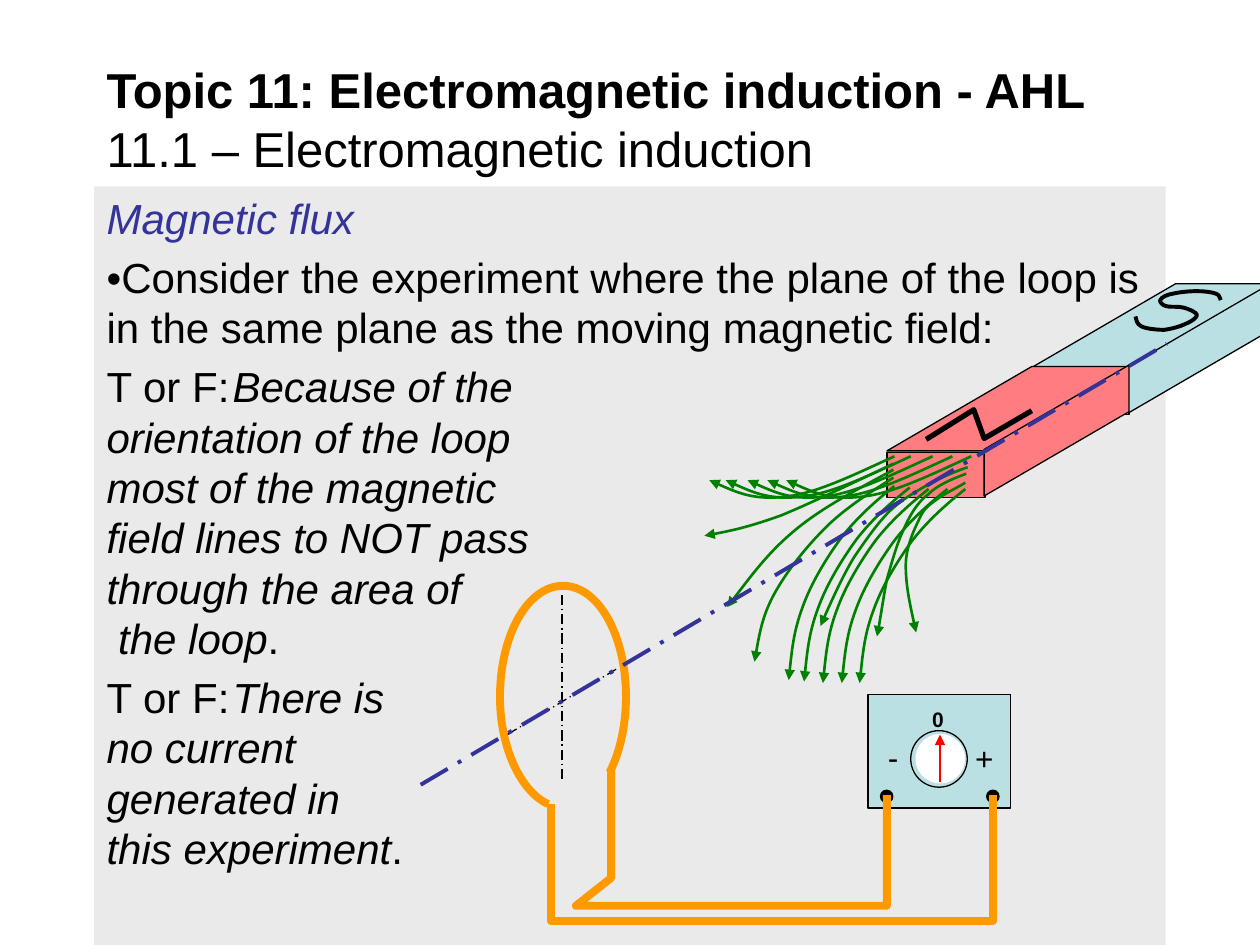
from dataclasses import dataclass

from lxml import etree
from pptx import Presentation
from pptx.dml.color import RGBColor
from pptx.enum.dml import MSO_LINE
from pptx.enum.shapes import MSO_CONNECTOR, MSO_SHAPE
from pptx.enum.text import MSO_ANCHOR, PP_ALIGN
from pptx.oxml.ns import qn
from pptx.util import Cm, Pt

RECTANGLE, OVAL = MSO_SHAPE.RECTANGLE, MSO_SHAPE.OVAL
STRAIGHT = MSO_CONNECTOR.STRAIGHT
LONG_DASH_DOT = MSO_LINE.LONG_DASH_DOT
TOP, MIDDLE = MSO_ANCHOR.TOP, MSO_ANCHOR.MIDDLE
LEFT = PP_ALIGN.LEFT

FLAT_BEND = [(0, 0), (-0.79, 0.36), (-1.55, 0.74), (-2.18, 0.81), (-2.82, 0.89), (-3.28, 0.69), (-3.73, 0.48)]
STEEP_BEND = [(0, 0), (-0.38, 0.3), (-0.76, 0.64), (-1.07, 1.04), (-1.37, 1.45), (-1.68, 1.96),
              (-1.85, 2.44), (-2.03, 2.92), (-2.08, 3.43), (-2.13, 3.91)]
FLAT_STARTS = [(18.03, 9.2), (18.36, 9.2), (18.8, 9.2), (19.2, 9.2), (19.58, 9.2)]
STEEP_STARTS = [(18.03, 9.8), (18.34, 9.83), (18.72, 9.86), (19.1, 9.86), (19.46, 9.86)]
SINGLE_FIELD_LINES = [
    [(18.01, 9.63), (17.53, 9.93), (17.02, 10.26), (16.64, 10.64), (16.23, 11.05), (15.85, 11.53),
     (15.6, 11.99), (15.37, 12.42), (15.29, 12.88), (15.21, 13.34)],
    [(18.01, 9.47), (17.3, 9.86), (16.61, 10.21), (16.05, 10.67), (15.49, 11.13), (15.09, 11.68), (14.66, 12.24)],
    [(18.01, 9.35), (17.2, 9.73), (16.38, 10.13), (15.75, 10.39), (15.11, 10.62), (14.66, 10.72), (14.2, 10.8)],
    [(19.46, 9.73), (19.25, 9.86), (19.02, 9.96), (18.87, 10.08), (18.69, 10.21), (18.62, 10.26), (18.52, 10.49),
     (18.42, 10.69), (18.26, 11.05), (18.26, 11.4), (18.26, 11.79), (18.36, 12.27), (18.47, 12.75)],
    [(19.48, 9.55), (19.35, 9.6), (18.92, 9.75), (18.72, 9.96), (18.49, 10.13), (18.34, 10.39), (18.21, 10.69),
     (18.08, 10.97), (17.98, 11.33), (17.88, 11.68), (17.81, 12.04), (17.73, 12.6), (17.68, 12.83)],
    [(19.51, 9.42), (19.35, 9.47), (18.95, 9.63), (18.69, 9.78), (18.44, 9.93), (18.19, 10.06), (17.93, 10.31),
     (17.7, 10.54), (17.48, 10.85), (17.22, 11.23), (16.99, 11.61), (16.66, 12.34), (16.54, 12.62)],
]
LETTER_N = [(18.67, 8.86), (19.63, 8.26), (19.84, 8.84), (20.8, 8.28)]
LETTER_S = [(24.61, 6.05), (24.59, 6.02), (24.59, 5.94), (24.51, 5.92), (24.43, 5.89), (24.28, 5.87), (24.13, 5.87),
            (23.98, 5.87), (23.77, 5.89), (23.65, 5.92), (23.52, 5.94), (23.42, 5.99), (23.39, 6.05),
            (23.37, 6.07), (23.42, 6.15), (23.5, 6.17), (23.57, 6.2), (23.75, 6.17), (23.85, 6.2),
            (23.95, 6.22), (24.13, 6.3), (24.13, 6.35), (24.13, 6.4), (24.03, 6.48), (23.9, 6.53),
            (23.8, 6.58), (23.62, 6.63), (23.47, 6.65), (23.32, 6.65), (23.11, 6.63), (23.01, 6.58),
            (22.91, 6.53), (22.91, 6.45), (22.89, 6.38)]
LOOP = [(11.05, 16.21), (10.49, 15.95), (10.08, 15.06), (10.08, 14.05), (10.08, 12.8), (10.64, 11.81), (11.35, 11.81),
        (12.06, 11.81), (12.62, 12.8), (12.62, 14.05), (12.62, 14.61), (12.5, 15.16), (12.29, 15.57)]
OUTER_WIRE = [(11.1, 16.21), (11.1, 18.57), (20.02, 18.57), (20.02, 16.03)]
INNER_WIRE = [(12.32, 15.49), (12.32, 17.7), (11.61, 18.26), (17.88, 18.26), (17.88, 16.03)]


@dataclass(frozen=True)
class Theme:
    font: str = "Arial"
    black: str = "000000"
    white: str = "FFFFFF"
    panel: str = "EAEAEA"
    accent: str = "333399"
    south: str = "BBE0E3"
    north: str = "FF7C80"
    field: str = "008000"
    wire: str = "FF9900"
    needle: str = "FF0000"
    title_size: int = 28
    body_size: int = 24
    sign_size: int = 18
    zero_size: int = 12
    thin: float = 0.75
    medium: float = 1.5
    bold: float = 2.25
    heavy: float = 3
    cable: float = 4.5


def add_text(paragraph, text, font, size, color, bold=False, italic=False):
    for index, line in enumerate(text.split("\n")):
        if index:
            paragraph.add_line_break()
        run = paragraph.add_run()
        run.text = line
        run.font.name, run.font.size = font, Pt(size)
        run.font.bold, run.font.italic = bold, italic
        run.font.color.rgb = RGBColor.from_string(color)


class Sketch:
    """Draws themed elements on the current slide, with positions in centimetres."""

    def __init__(self, slide, theme):
        self.slide, self.theme = slide, theme

    def paint(self, shape, fill, line, width, arrow=False):
        shape.shadow.inherit = False
        if fill:
            shape.fill.solid()
            shape.fill.fore_color.rgb = RGBColor.from_string(fill)
        else:
            shape.fill.background()
        self.stroke(shape, line, width, arrow)

    def stroke(self, shape, line, width, arrow=False):
        if not line:
            shape.line.fill.background()
            return
        shape.line.color.rgb = RGBColor.from_string(line)
        shape.line.width = Pt(width)
        if arrow:
            etree.SubElement(shape._element.xpath(".//a:ln")[0], qn("a:tailEnd"), type="triangle")

    def shape(self, kind, box, fill=None, line=None):
        shape = self.slide.shapes.add_shape(kind, *map(Cm, box))
        self.paint(shape, fill, line, self.theme.thin)
        return shape

    def outline(self, points, line, width, fill=None, curved=False, arrow=False):
        corners = [(Cm(x), Cm(y)) for x, y in points]
        builder = self.slide.shapes.build_freeform(*corners[0])
        builder.add_line_segments(corners[1:], close=bool(fill))
        shape = builder.convert_to_shape()
        self.paint(shape, fill, line, width, arrow)
        if curved:
            segments = shape._element.xpath(".//a:lnTo")
            for start in range(0, len(segments), 3):
                curve = etree.Element(qn("a:cubicBezTo"))
                segments[start].addprevious(curve)
                for segment in segments[start:start + 3]:
                    curve.append(segment[0])
                    segment.getparent().remove(segment)

    def connector(self, start, end, line, width, dash=None, arrow=False):
        connector = self.slide.shapes.add_connector(STRAIGHT, *map(Cm, start + end))
        self.stroke(connector, line, width, arrow)
        if dash:
            connector.line.dash_style = dash
        etree.SubElement(connector._element.spPr, qn("a:effectLst"))

    def text_box(self, box):
        return self.slide.shapes.add_textbox(*map(Cm, box))

    def paragraphs(self, shape, paragraphs, size, anchor=TOP, space=0):
        frame = shape.text_frame
        frame.word_wrap, frame.vertical_anchor = True, anchor
        for index, runs in enumerate(paragraphs):
            paragraph = frame.add_paragraph() if index else frame.paragraphs[0]
            paragraph.alignment, paragraph.space_before = LEFT, Pt(space)
            for text, style in runs:
                add_text(paragraph, text, **{"font": self.theme.font, "size": size, "color": self.theme.black, **style})

    def magnet_half(self, x, y, fill):
        theme = self.theme
        self.shape(RECTANGLE, (x, y + 0.03, 1.98, 0.91), fill, theme.black)
        top = [(0, 0), (2.92, -1.7), (4.88, -1.7), (1.96, 0)]
        side = [(1.96, 0.91), (1.96, -0.03), (4.88, -1.73), (4.88, -0.79)]
        for face in (top, side):
            self.outline(shifted(face, (x, y)), theme.black, theme.thin, fill)


def shifted(points, origin):
    return [(origin[0] + x, origin[1] + y) for x, y in points]


def draw_text(sketch):
    theme, italic = sketch.theme, {"italic": True}
    panel = sketch.shape(RECTANGLE, (1.9, 3.76, 21.6, 15.29), theme.panel)
    sketch.paragraphs(panel, [
        [("Magnetic flux", {"italic": True, "color": theme.accent})],
        [("•Consider the experiment where the plane of the loop is in the same plane as the moving magnetic field:", {})],
        [("T or F:\t", {}),
         ("Because of the\norientation of the loop\nmost of the magnetic\nfield lines to NOT pass\n"
          "through the area of\n the loop", italic), (".", {})],
        [("T or F:\t", {}), ("There is\nno current\ngenerated in\nthis experiment", italic), (".", {})],
    ], theme.body_size, space=4.8)
    sketch.paragraphs(sketch.text_box((1.9, 1.14, 21.6, 2.49)), [[
        ("Topic 11: Electromagnetic induction - AHL\n", {"bold": True}),
        ("11.1 – Electromagnetic induction", {}),
    ]], theme.title_size, MIDDLE)


def draw_magnet(sketch):
    theme = sketch.theme
    sketch.magnet_half(20.78, 7.42, theme.south)
    sketch.magnet_half(17.88, 9.09, theme.north)
    sketch.outline(LETTER_N, theme.black, theme.heavy)
    sketch.outline(LETTER_S, theme.black, theme.bold, curved=True)
    flat = [shifted(FLAT_BEND, start) for start in FLAT_STARTS]
    steep = [shifted(STEEP_BEND, start) for start in STEEP_STARTS]
    for points in flat + steep + SINGLE_FIELD_LINES:
        sketch.outline(points, theme.field, theme.medium, curved=True, arrow=True)


def draw_circuit(sketch):
    theme = sketch.theme
    sketch.outline(LOOP, theme.wire, theme.cable, curved=True)
    sketch.shape(RECTANGLE, (17.5, 14, 2.87, 2.29), theme.south, theme.black)
    sketch.shape(OVAL, (18.36, 14.73, 1.14, 1.14), line=theme.black)
    for text, box, size, bold in [("-", (17.65, 14.76, 0.79, 1.02), theme.sign_size, False),
                                  ("0", (18.54, 14.12, 1.07, 0.76), theme.zero_size, True),
                                  ("+", (19.41, 14.78, 0.79, 1.02), theme.sign_size, False)]:
        sketch.paragraphs(sketch.text_box(box), [[(text, {"bold": bold})]], size)
    for x in (17.75, 19.89):
        sketch.shape(OVAL, (x, 15.93, 0.25, 0.25), theme.black, theme.black)
    sketch.shape(OVAL, (18.47, 14.81, 0.97, 0.97), theme.white, theme.white)
    sketch.connector((18.95, 15.77), (18.95, 14.81), theme.needle, theme.medium, arrow=True)
    sketch.outline(OUTER_WIRE, theme.wire, theme.cable)
    sketch.connector((12.42, 13.49), (10.19, 14.83), theme.black, theme.thin, LONG_DASH_DOT)
    sketch.connector((11.33, 11.99), (11.33, 15.77), theme.black, theme.thin, LONG_DASH_DOT)
    sketch.outline(INNER_WIRE, theme.wire, theme.cable)
    sketch.connector((8.48, 15.82), (23.52, 6.93), theme.accent, theme.bold, LONG_DASH_DOT)


def main():
    presentation = Presentation()
    presentation.slide_width, presentation.slide_height = Cm(25.4), Cm(19.05)
    sketch = Sketch(presentation.slides.add_slide(presentation.slide_layouts[6]), Theme())
    draw_text(sketch)
    draw_magnet(sketch)
    draw_circuit(sketch)
    presentation.save("out.pptx")


if __name__ == "__main__":
    main()
